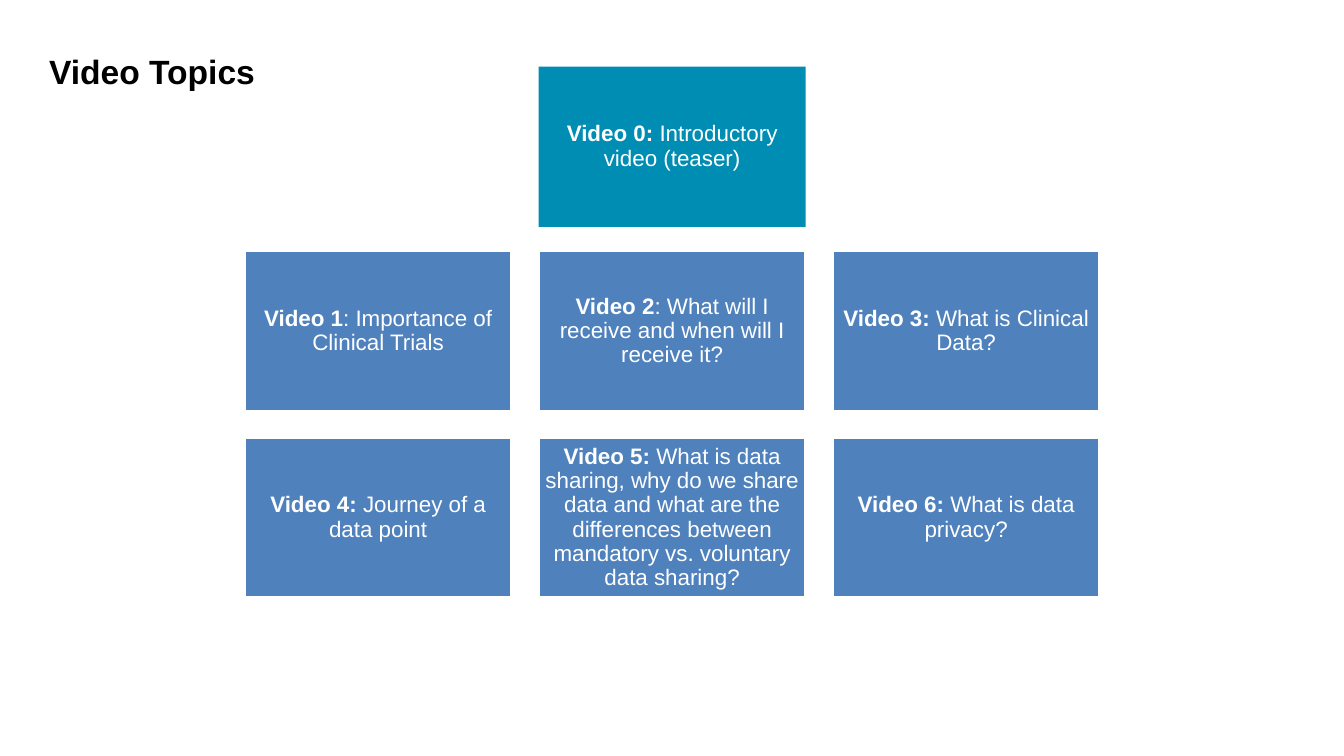
import pptx
import pptx.util
import pptx.dml.color
import pptx.enum.shapes
import pptx.enum.text

Pt = pptx.util.Pt
COLORS = {"intro": "008DB4", "topic": "4F81BD", "white": "FFFFFF", "black": "000000"}


def color(name):
    return pptx.dml.color.RGBColor.from_string(COLORS[name])


def add_run(paragraph, text, size, bold, color_name):
    run = paragraph.add_run()
    run.text = text
    for key, value in {"name": "Arial", "size": Pt(size), "bold": bold}.items():
        setattr(run.font, key, value)
    run.font.color.rgb = color(color_name)


presentation = pptx.Presentation()
presentation.slide_width = Pt(960)
presentation.slide_height = Pt(540)
slide = presentation.slides.add_slide(presentation.slide_layouts[6])

# Title
title = slide.shapes.add_textbox(Pt(28), Pt(33), Pt(878.4), Pt(83))
title.text_frame.word_wrap = True
add_run(title.text_frame.paragraphs[0], "Video Topics", 24, True, "black")

# Video boxes: column, row, label, topic
videos = [
    (1, 0, "Video 0: ", "Introductory video (teaser)"),
    (0, 1, "Video 1", ": Importance of Clinical Trials"),
    (1, 1, "Video 2", ": What will I receive and when will I receive it?"),
    (2, 1, "Video 3: ", "What is Clinical Data?"),
    (0, 2, "Video 4: ", "Journey of a data point"),
    (1, 2, "Video 5: ", "What is data sharing, why do we share data and what are the "
                        "differences between mandatory vs. voluntary data sharing?"),
    (2, 2, "Video 6: ", "What is data privacy?"),
]
LEFT, COLUMN_STEP = 174.7, 210
ROW_TOPS = [47.6, 179.2, 312.6]
WIDTH, HEIGHT = 190.8, 114.5
FRAME_FORMAT = {
    "word_wrap": True,
    "vertical_anchor": pptx.enum.text.MSO_ANCHOR.MIDDLE,
    "margin_left": Pt(4.8),
    "margin_right": Pt(4.8),
    "margin_top": Pt(4.8),
    "margin_bottom": Pt(4.8),
}

for column, row, label, topic in videos:
    box = slide.shapes.add_shape(
        pptx.enum.shapes.MSO_SHAPE.RECTANGLE,
        Pt(LEFT + column * COLUMN_STEP), Pt(ROW_TOPS[row]), Pt(WIDTH), Pt(HEIGHT))
    box.shadow.inherit = False
    box.fill.solid()
    if row == 0:
        box.fill.fore_color.rgb = color("intro")
        box.line.fill.background()
    else:
        box.fill.fore_color.rgb = color("topic")
        box.line.color.rgb = color("white")
        box.line.width = Pt(2)
    for key, value in FRAME_FORMAT.items():
        setattr(box.text_frame, key, value)
    paragraph = box.text_frame.paragraphs[0]
    paragraph.alignment = pptx.enum.text.PP_ALIGN.CENTER
    paragraph.line_spacing = 0.9
    add_run(paragraph, label, 16, True, "white")
    add_run(paragraph, topic, 16, False, "white")

presentation.save("out.pptx")
